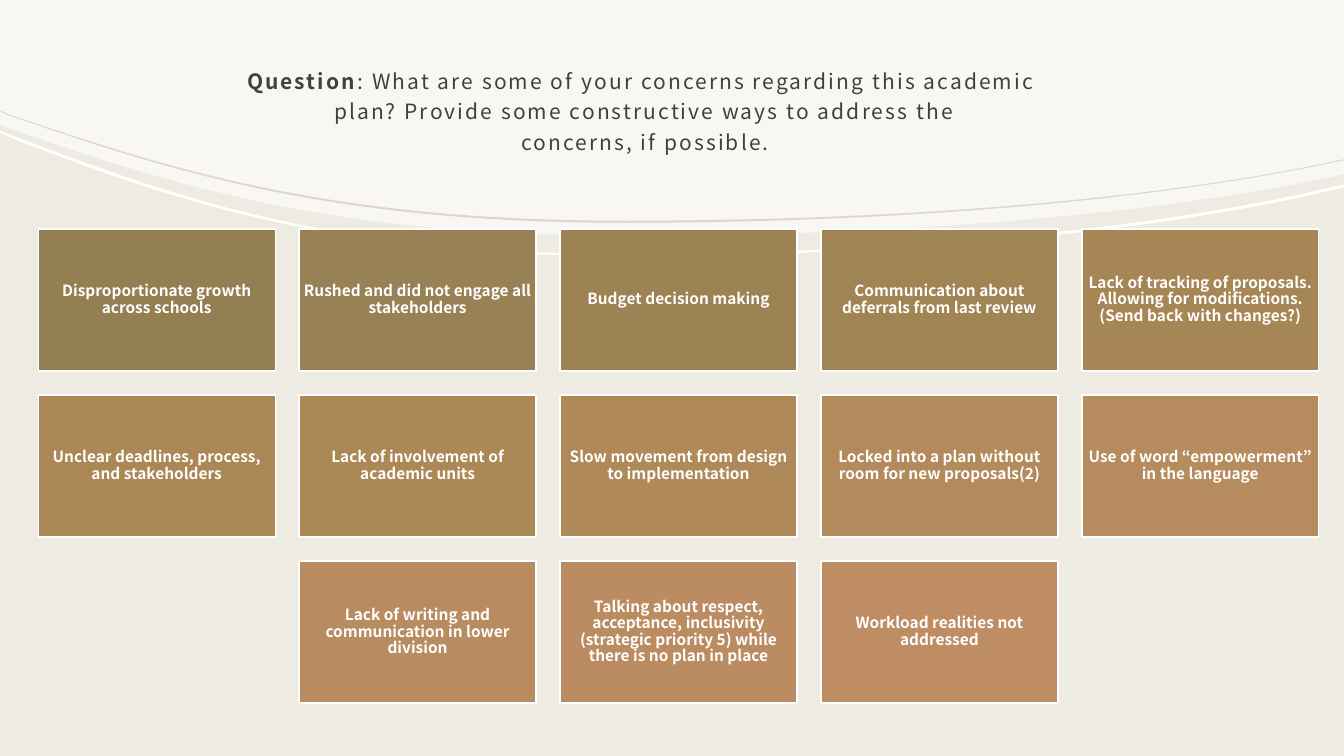
from dataclasses import dataclass

from lxml.etree import Element, SubElement
from pptx import Presentation
from pptx.dml.color import RGBColor
from pptx.enum.shapes import MSO_SHAPE
from pptx.enum.text import MSO_ANCHOR, MSO_AUTO_SIZE, PP_ALIGN
from pptx.oxml.ns import qn
from pptx.util import Inches, Pt


@dataclass(frozen=True)
class Theme:
    font: str = "Noto Sans CJK JP"
    title_size: float = 15
    tile_size: float = 11
    background: str = "EEEBE2"
    white: str = "FFFFFF"
    hairline: str = "DDD7C5"
    title_color: str = "404040"


THEME = Theme()
SLIDE_W, SLIDE_H = 13.33, 7.5

# Each edge of the header swoop gives one height for each of these x positions:
# a short line, two cubic curves and a short line.
EDGE_X = (0, 0.19, 1.79, 3.33, 6.2, 8.75, 11.09, 12.89, SLIDE_W)
CURVE_STARTS = (2, 5)
PANEL_EDGE = (1.24, 1.31, 1.86, 2.34, 2.34, 2.34, 2.16, 1.82, 1.73)
WHITE_BAND = ((1.3, 1.37, 1.98, 2.52, 2.52, 2.52, 2.31, 1.93, 1.83),
              (1.32, 1.4, 2.01, 2.54, 2.54, 2.54, 2.34, 1.96, 1.86))
HAIRLINE_BAND = ((1.1, 1.17, 1.71, 2.19, 2.19, 2.19, 2.01, 1.67, 1.58),
                 (1.11, 1.18, 1.73, 2.21, 2.21, 2.21, 2.02, 1.68, 1.59))

QUESTION = (": What are some of your concerns regarding this academic\v"
            " plan? Provide some constructive ways to address the\v"
            " concerns, if possible.")

CONCERNS = (
    ("Disproportionate growth across schools", "947F53"),
    ("Rushed and did not engage all stakeholders", "988154"),
    ("Budget decision making", "9D8354"),
    ("Communication about deferrals from last review", "A18454"),
    ("Lack of tracking of proposals. Allowing for modifications. "
     "(Send back with changes?)", "A68655"),
    ("Unclear deadlines, process, and stakeholders", "AA8755"),
    ("Lack of involvement of academic units", "AD8857"),
    ("Slow movement from design to implementation", "B08959"),
    ("Locked into a plan without room for new proposals(2)", "B38A5B"),
    ("Use of word “empowerment” in the language", "B68B5D"),
    ("Lack of writing and communication in lower division", "B98B60"),
    ("Talking about respect, acceptance, inclusivity (strategic priority 5) "
     "while there is no plan in place", "BB8C62"),
    ("Workload realities not addressed", "BE8D64"),
)
COLUMNS = 5
TILE_W, TILE_H = 2.35, 1.41
GRID_LEFT, GRID_RIGHT, GRID_TOP = 0.38, 13.08, 2.27
TILE_GAP = (GRID_RIGHT - GRID_LEFT - COLUMNS * TILE_W) / (COLUMNS - 1)


def rgb(color):
    return RGBColor.from_string(color)


def write_text(frame, *runs, size, color, line_spacing, insets, tracking=0):
    """Fill the frame with one centred paragraph of (text, bold) runs."""
    frame.word_wrap = True
    frame.auto_size = MSO_AUTO_SIZE.NONE
    frame.vertical_anchor = MSO_ANCHOR.MIDDLE
    (frame.margin_left, frame.margin_top,
     frame.margin_right, frame.margin_bottom) = map(Inches, insets)
    paragraph = frame.paragraphs[0]
    paragraph.alignment = PP_ALIGN.CENTER
    paragraph.line_spacing = line_spacing
    for text, bold in runs:
        for index, line in enumerate(text.split("\v")):
            if index:
                paragraph.add_line_break()
            run = paragraph.add_run()
            run.text = line
            run.font.name = THEME.font
            run.font.size = Pt(size)
            run.font.bold = bold
            run.font.color.rgb = rgb(color)
            if tracking:
                run.font._element.set("spc", str(int(tracking * 100)))


def bend_lines(shape, starts):
    """Turn each three line segments that begin at a start into one cubic curve."""
    segments = list(next(shape._element.iter(qn("a:path"))))
    for start in starts:
        curve = Element(qn("a:cubicBezTo"))
        segments[start].addprevious(curve)
        for segment in segments[start:start + 3]:
            curve.append(segment[0])
            segment.getparent().remove(segment)


def add_swoop(slide, edge, color, lower_edge=None, opacity=100):
    """Draw the area between two edges, or from one edge up to the slide top."""
    nodes = list(zip(EDGE_X, edge))
    starts = list(CURVE_STARTS)
    if lower_edge:
        starts += [len(nodes) + start for start in CURVE_STARTS]
        nodes += list(zip(EDGE_X, lower_edge))[::-1]
    else:
        nodes += [(SLIDE_W, 0), (0, 0)]
    outline = [(Inches(x), Inches(y)) for x, y in nodes]
    builder = slide.shapes.build_freeform(*outline[0])
    builder.add_line_segments(outline[1:], close=True)
    swoop = builder.convert_to_shape()
    bend_lines(swoop, starts)
    swoop.shadow.inherit = False
    swoop.line.fill.background()
    swoop.fill.solid()
    swoop.fill.fore_color.rgb = rgb(color)
    if opacity < 100:
        fill_color = swoop._element.spPr.find(".//" + qn("a:srgbClr"))
        SubElement(fill_color, qn("a:alpha"), val=str(opacity * 1000))


def place_title(slide):
    title = slide.shapes.title
    title.left, title.top = Inches(0.73), Inches(0.4)
    title.width, title.height = Inches(11.27), Inches(1.34)
    write_text(title.text_frame, ("Question", True), (QUESTION, False),
               size=THEME.title_size, color=THEME.title_color, line_spacing=1.2,
               insets=(0.12, 0.12, 0.12, 0.1), tracking=1.5)
    # Bring the title in front of the swoops drawn so far.
    title._element.getparent().append(title._element)


def add_tile(slide, left, top, concern, color):
    tile = slide.shapes.add_shape(MSO_SHAPE.RECTANGLE, Inches(left), Inches(top),
                                  Inches(TILE_W), Inches(TILE_H))
    tile.shadow.inherit = False
    tile.fill.solid()
    tile.fill.fore_color.rgb = rgb(color)
    tile.line.color.rgb = rgb(THEME.white)
    tile.line.width = Pt(1)
    write_text(tile.text_frame, (concern, True), size=THEME.tile_size,
               color=THEME.white, line_spacing=0.9,
               insets=(0.04, 0.05, 0.04, 0.05))


def add_concern_grid(slide):
    """Lay the tiles out in rows, with a short last row centred."""
    for start in range(0, len(CONCERNS), COLUMNS):
        row = CONCERNS[start:start + COLUMNS]
        indent = (COLUMNS - len(row)) / 2
        top = GRID_TOP + start // COLUMNS * (TILE_H + TILE_GAP)
        for column, (concern, color) in enumerate(row):
            left = GRID_LEFT + (column + indent) * (TILE_W + TILE_GAP)
            add_tile(slide, left, top, concern, color)


def main():
    deck = Presentation()
    deck.slide_width, deck.slide_height = Inches(SLIDE_W), Inches(SLIDE_H)
    slide = deck.slides.add_slide(deck.slide_layouts.get_by_name("Title Only"))
    slide.background.fill.solid()
    slide.background.fill.fore_color.rgb = rgb(THEME.background)

    add_swoop(slide, PANEL_EDGE, THEME.white, opacity=60)
    white_top, white_bottom = WHITE_BAND
    add_swoop(slide, white_top, THEME.white, lower_edge=white_bottom)
    place_title(slide)
    hairline_top, hairline_bottom = HAIRLINE_BAND
    add_swoop(slide, hairline_top, THEME.hairline, lower_edge=hairline_bottom)
    add_concern_grid(slide)
    deck.save("out.pptx")


if __name__ == "__main__":
    main()
